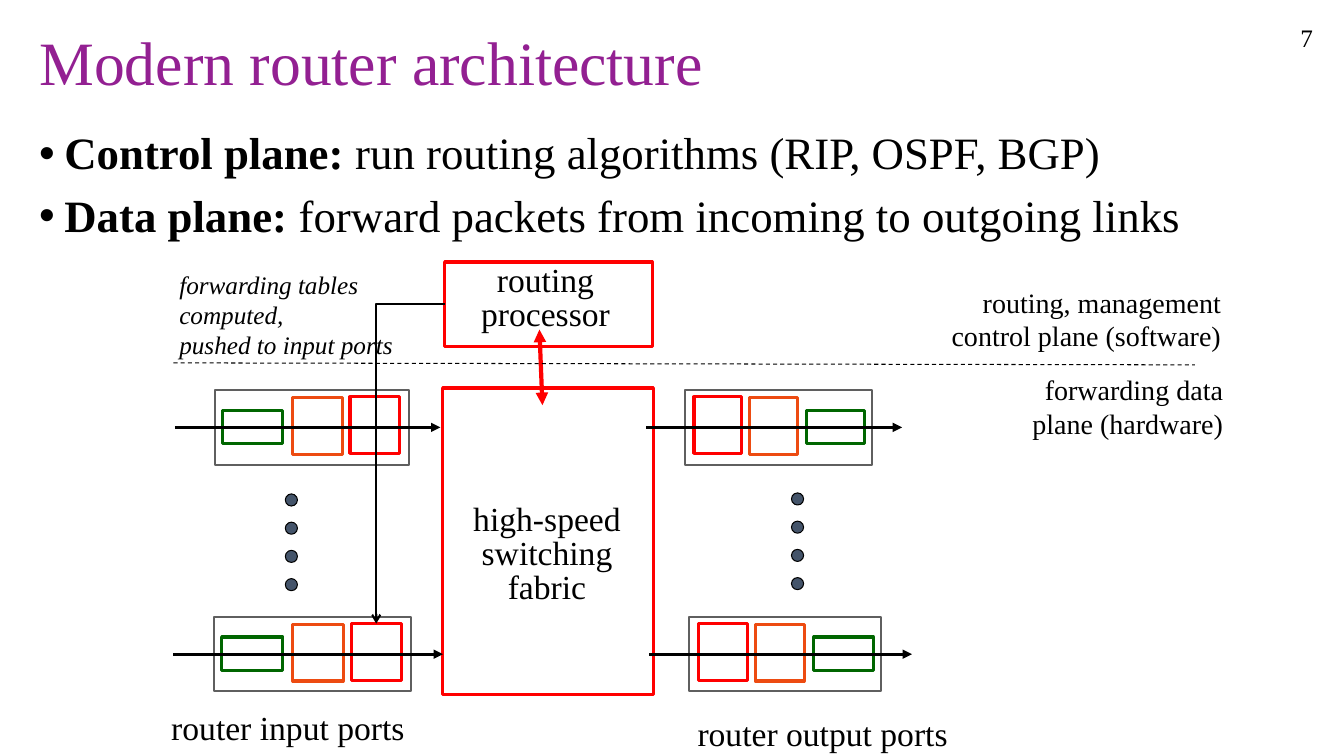
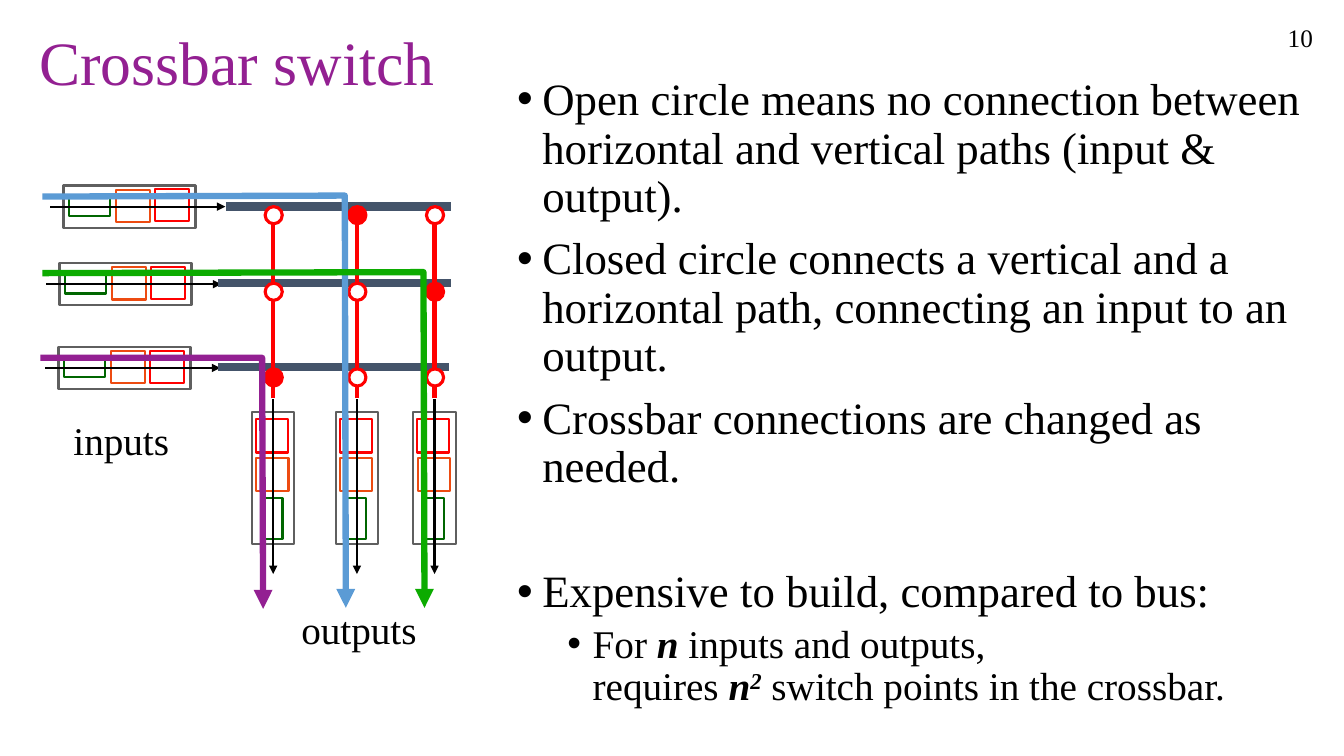
from lxml import etree
from pptx import Presentation
from pptx.dml.color import RGBColor
from pptx.enum.dml import MSO_LINE
from pptx.enum.shapes import MSO_CONNECTOR as CONN, MSO_SHAPE as SHAPE
from pptx.enum.text import MSO_ANCHOR as ANCHOR, PP_ALIGN as ALIGN
from pptx.oxml.ns import qn
from pptx.util import Inches, Pt

FONT = "Times New Roman"
BLACK = RGBColor(0x00, 0x00, 0x00)
WHITE = RGBColor(0xFF, 0xFF, 0xFF)
PURPLE = RGBColor(0x93, 0x20, 0x92)
RED = RGBColor(0xFF, 0x00, 0x00)
ORANGE = RGBColor(0xED, 0x4B, 0x11)
DARK_GREEN = RGBColor(0x00, 0x66, 0x00)
GREEN = RGBColor(0x0C, 0xAB, 0x00)
BLUE = RGBColor(0x5B, 0x9B, 0xD5)
SLATE = RGBColor(0x44, 0x54, 0x6A)
GRAY = RGBColor(0x5F, 0x5F, 0x5F)

PLANES = [
    (0, 0, [("Control plane: ", "b"), ("run routing algorithms (RIP, OSPF, BGP)", "")]),
    (0, 10, [("Data plane: ", "b"), ("forward packets from incoming to outgoing links", "")]),
]
CROSSBAR_NOTES = [
    (0, 0, [("Open circle means no connection between horizontal and vertical paths "
             "(input & output).", "")]),
    (0, 10, [("Closed circle connects a vertical and a horizontal path, "
              "connecting an input to an output.", "")]),
    (0, 10, [("Crossbar connections are changed as needed.", "")]),
    (0, 55, [("Expensive to build, compared to bus:", "")]),
    (1, 5, [("For ", ""), ("n", "bi"), (" inputs and outputs,", ""), ("\n", ""),
            ("requires ", ""), ("n", "bi"), ("2", "bi^"),
            (" switch points in the crossbar.", "")]),
]
BULLET_SIZES = (32, 28)

ROUTER_PORTS = [
    (2.13, 3.87, 1.93, False), (2.12, 6.12, 1.96, False),
    (6.79, 3.87, 1.86, True), (6.83, 6.12, 1.91, True),
]
DOT_COLUMNS = [(2.83, 4.9), (7.85, 4.89)]
FABRIC_LABELS = [
    (["high-speed", "switching", "fabric"], (4.57, 4.95, 1.71, 1.13), 24),
    (["routing", "processor"], (4.54, 2.58, 1.74, 0.95), 24),
]
PORT_LABELS = [
    (["router input ports"], (1.6, 6.96, 3.01, 0.6), 24),
    (["router output ports"], (6.82, 7.02, 3.23, 0.6), 24),
]
PLANE_LABELS = [
    (["forwarding data plane (hardware)"], (9.71, 3.65, 2.52, 0.92), 20),
    (["routing, management", "control plane (software)"], (9.03, 2.78, 3.18, 1.32), 20),
]
TABLE_NOTE = ["forwarding tables computed,", "pushed to input ports"]

INPUT_PORTS = [(0.63, 1.84), (0.59, 2.61), (0.58, 3.44)]
RAILS = [(2.24, 4.47, 2.05), (2.16, 4.47, 2.81), (2.16, 4.45, 3.64)]
COLUMNS = [(2.71, 2.05), (3.54, 2.14), (4.31, 2.15)]
CIRCLE_TOPS = [2.05, 2.81, 3.66]
CLOSED = {(0, 2), (1, 0), (2, 1)}
FLOWS = [
    (BLUE, [(0.42, 1.95), (3.42, 1.94), (3.43, 6.03)]),
    (GREEN, [(0.42, 2.71), (4.2, 2.7), (4.21, 6.03)]),
    (PURPLE, [(0.4, 3.55), (2.6, 3.55), (2.61, 6.04)]),
]
CROSSBAR_LABELS = [
    (["inputs"], (0.63, 4.08, 1.34, 0.44), 28),
    (["outputs"], (2.89, 5.96, 1.42, 0.57), 28),
]

QUEUES = [
    (DARK_GREEN, 0.04, 0.31, 0.27, 0.45),
    (ORANGE, 0.4, 0.255, 0.1, 0.76),
    (RED, 0.695, 0.255, 0.09, 0.76),
]


def add_run(p, text, size, color=BLACK, style=""):
    r = p.add_run()
    r.text = text
    f = r.font
    f.name, f.size, f.color.rgb = FONT, Pt(size), color
    f.bold, f.italic = "b" in style, "i" in style
    if "^" in style:
        r._r.get_or_add_rPr().set("baseline", "30000")


def add_text(slide, lines, box, size, align=ALIGN.LEFT, spacing=1.0, style="", wrap=True):
    tf = slide.shapes.add_textbox(*map(Inches, box)).text_frame
    tf.word_wrap = wrap
    for i, line in enumerate(lines):
        p = tf.paragraphs[0] if i == 0 else tf.add_paragraph()
        p.alignment, p.line_spacing = align, spacing
        add_run(p, line, size, style=style)


def add_bullets(slide, items, box, anchor=ANCHOR.TOP):
    tf = slide.shapes.add_textbox(*map(Inches, box)).text_frame
    tf.word_wrap, tf.vertical_anchor = True, anchor
    for i, (level, before, runs) in enumerate(items):
        p = tf.paragraphs[0] if i == 0 else tf.add_paragraph()
        p.level, p.line_spacing, p.space_before = level, 0.9, Pt(before)
        pPr = p._p.get_or_add_pPr()
        pPr.set("marL", str(Inches(0.25 + 0.5 * level)))
        pPr.set("indent", str(Inches(-0.25)))
        etree.SubElement(pPr, qn("a:buFont")).set("typeface", "Arial")
        etree.SubElement(pPr, qn("a:buChar")).set("char", "•")
        for text, style in runs:
            if text == "\n":
                p.add_line_break()
            else:
                add_run(p, text, BULLET_SIZES[level], style=style)


def add_box(slide, box, line, width, fill=WHITE, kind=SHAPE.RECTANGLE):
    sp = slide.shapes.add_shape(kind, *map(Inches, box))
    sp.shadow.inherit = False
    sp.fill.solid()
    sp.fill.fore_color.rgb = fill
    sp.line.color.rgb, sp.line.width = line, Pt(width)
    return sp


def add_arrowhead(sp, end="tailEnd", kind="triangle"):
    etree.SubElement(sp.line._get_or_add_ln(), qn("a:" + end)).set("type", kind)


def add_line(slide, start, end, color, width, kind=CONN.STRAIGHT):
    c = slide.shapes.add_connector(kind, *map(Inches, (*start, *end)))
    c.line.color.rgb, c.line.width = color, Pt(width)
    etree.SubElement(c._element.spPr, qn("a:effectLst"))
    return c


def add_flow(slide, color, points):
    pts = [(Inches(x), Inches(y)) for x, y in points]
    fb = slide.shapes.build_freeform(*pts[0])
    fb.add_line_segments(pts[1:], close=False)
    sp = fb.convert_to_shape()
    sp.shadow.inherit = False
    sp.fill.background()
    sp.line.color.rgb, sp.line.width = color, Pt(4.5)
    add_arrowhead(sp)


def add_port(slide, x, y, length, depth, weights, reach, mirrored=False, vertical=False):
    def place(a, b, w, h):
        if vertical:
            a, b, w, h = b, a, h, w
        return x + a, y + b, w, h

    frame_pt, queue_pt, arrow_pt = weights
    add_box(slide, place(0, 0, length, depth), GRAY, frame_pt)
    for color, a, w, b, h in QUEUES:
        if mirrored:
            a = 1 - a - w
        queue = add_box(slide, place(a * length, b * depth, w * length, h * depth),
                        color, queue_pt)
    start, end = (place(t * length, depth / 2, 0, 0)[:2] for t in reach)
    add_arrowhead(add_line(slide, start, end, BLACK, arrow_pt))
    return queue


def add_slide(prs, title, number):
    slide = prs.slides.add_slide(prs.slide_layouts[5])
    sp = slide.shapes.title
    sp.left, sp.top, sp.width, sp.height = map(Inches, (0.29, 0.17, 12.73, 0.97))
    tf = sp.text_frame
    tf.word_wrap, tf.vertical_anchor = True, ANCHOR.MIDDLE
    p = tf.paragraphs[0]
    p.alignment, p.line_spacing = ALIGN.LEFT, 0.9
    add_run(p, title, 44, PURPLE)
    add_text(slide, [number], (12.46, 0.17, 0.66, 0.4), 18, ALIGN.RIGHT)
    return slide


def build_router(prs):
    slide = add_slide(prs, "Modern router architecture", "7")
    add_bullets(slide, PLANES, (0.29, 1.25, 12.73, 1.47))

    add_box(slide, (4.39, 3.85, 2.09, 3.04), RED, 2.25)
    processor = add_box(slide, (4.41, 2.6, 2.06, 0.84), RED, 2.25)
    for lines, box, size in FABRIC_LABELS:
        add_text(slide, lines, box, size, ALIGN.CENTER, 0.85, wrap=False)
    link = add_line(slide, (5.35, 3.27), (5.38, 4.02), RED, 3)
    add_arrowhead(link, "headEnd")
    add_arrowhead(link)

    queues = [add_port(slide, x, y, length, 0.74, (1.5, 2.25, 2.25), (-0.205, 1.16), mirrored)
              for x, y, length, mirrored in ROUTER_PORTS]
    for x, y in DOT_COLUMNS:
        for i in range(4):
            add_box(slide, (x, y + 0.28 * i, 0.12, 0.12), BLACK, 0.75, SLATE, SHAPE.OVAL)
    for lines, box, size in PORT_LABELS:
        add_text(slide, lines, box, size, wrap=False)

    divider = add_line(slide, (1.72, 3.6), (11.85, 3.62), BLACK, 0.75)
    divider.line.dash_style = MSO_LINE.DASH
    for lines, box, size in PLANE_LABELS:
        add_text(slide, lines, box, size, ALIGN.RIGHT)

    push = add_line(slide, (4.41, 3.02), (3.72, 6.19), BLACK, 1.5, CONN.ELBOW)
    push._element.spPr.find(qn("a:prstGeom")).set("prst", "bentConnector2")
    push.begin_connect(processor, 1)
    push.end_connect(queues[1], 0)
    add_arrowhead(push, kind="arrow")
    add_text(slide, TABLE_NOTE, (1.68, 2.62, 2.51, 0.71), 18, style="i")


def build_crossbar(prs):
    slide = add_slide(prs, "Crossbar switch", "10")
    add_bullets(slide, CROSSBAR_NOTES, (5.03, 0.65, 7.99, 6.5), ANCHOR.MIDDLE)

    port = dict(length=1.31, depth=0.42, weights=(1.5, 1.5, 1.5), reach=(-0.1, 1.225))
    for x, y in INPUT_PORTS:
        add_port(slide, x, y, **port)
    for x, _ in COLUMNS:
        add_port(slide, x - 0.21, 4.09, mirrored=True, vertical=True, **port)

    for left, right, y in RAILS:
        add_line(slide, (left, y), (right, y), SLATE, 6)
    for x, top in COLUMNS:
        add_line(slide, (x, 3.95), (x, top), RED, 3)
    for col, (x, _) in enumerate(COLUMNS):
        for row, top in enumerate(CIRCLE_TOPS):
            fill = RED if (col, row) in CLOSED else WHITE
            add_box(slide, (x - 0.08, top, 0.17, 0.17), RED, 2.25, fill, SHAPE.OVAL)

    for color, points in FLOWS:
        add_flow(slide, color, points)
    for lines, box, size in CROSSBAR_LABELS:
        add_text(slide, lines, box, size)


def main():
    prs = Presentation()
    prs.slide_width, prs.slide_height = Inches(13.33), Inches(7.5)
    build_router(prs)
    build_crossbar(prs)
    prs.save("out.pptx")


if __name__ == "__main__":
    main()
